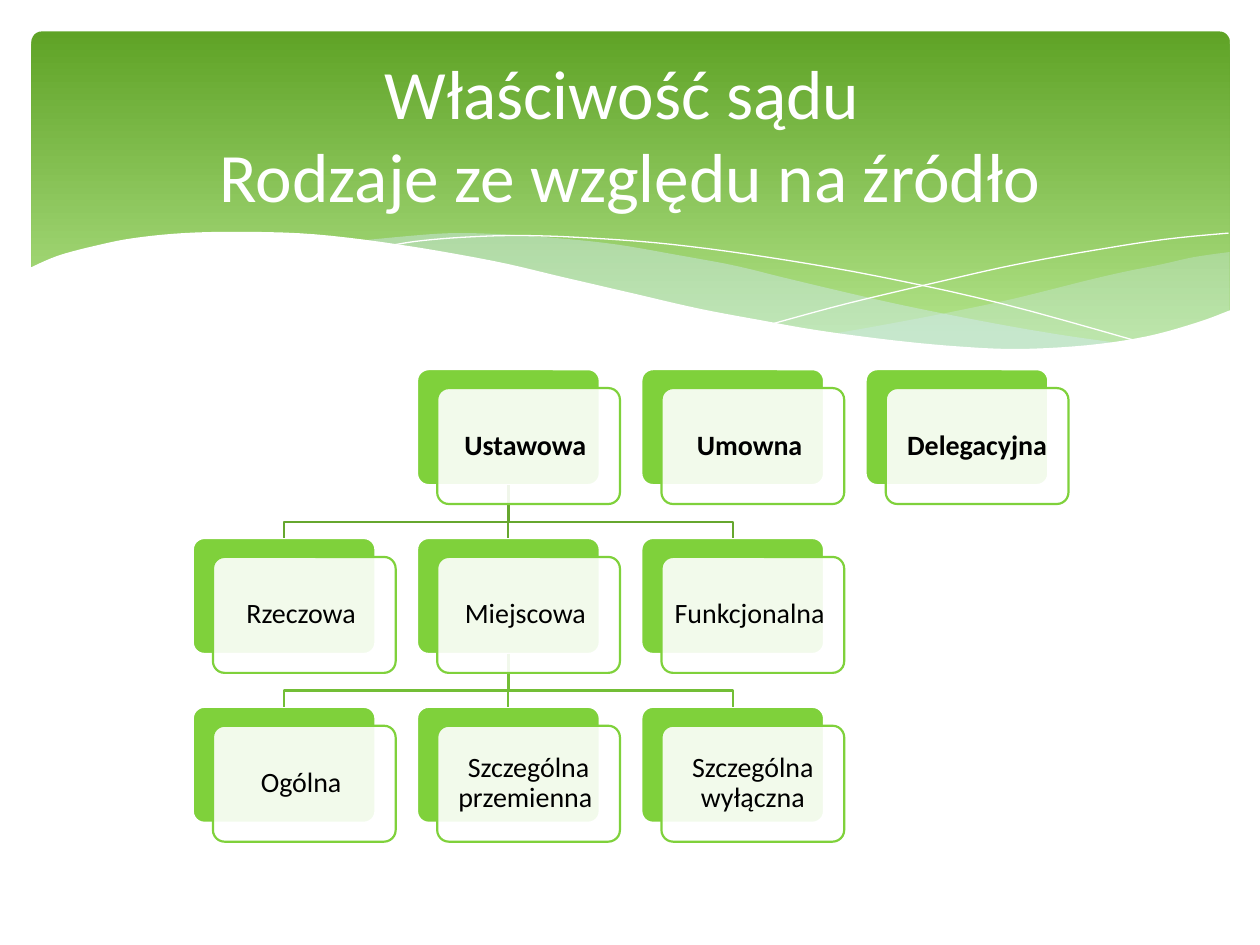
import pptx
import pptx.dml.color
import pptx.enum.shapes
import pptx.enum.text
import pptx.oxml.ns
import pptx.util
from lxml import etree

Inches = pptx.util.Inches
Pt = pptx.util.Pt
qn = pptx.oxml.ns.qn

COLORS = {
    "banner_top": "5FA326", "banner_bottom": "B2E389", "ribbon": "D6ECFF",
    "white": "FFFFFF", "black": "000000", "card": "7FD13B",
    "upper_link": "66A72F", "lower_link": "73BE36",
}

# Card grid, in inches
LEFT, TOP = 1.53, 2.93
CARD_W, CARD_H = 1.45, 0.92
GAP_X, GAP_Y = 0.33, 0.42
SHIFT_X, SHIFT_Y = 0.16, 0.15
BEND = 0.29  # drop from a parent card to the crossbar

# (column, row): label
CARDS = {
    (1, 0): "Ustawowa ", (2, 0): "Umowna ", (3, 0): "Delegacyjna",
    (0, 1): "Rzeczowa ", (1, 1): "Miejscowa ", (2, 1): "Funkcjonalna ",
    (0, 2): "Ogólna ", (1, 2): "Szczególna przemienna ", (2, 2): "Szczególna wyłączna",
}
PARENT_COLUMN = 1
LINK_COLORS = {0: "upper_link", 1: "lower_link"}  # by parent row

# Key points of the waves, left to right
RIGHT_RIBBON_TOP = [(6.61, 2.65), (7.06, 2.57), (7.53, 2.48), (8.05, 2.37), (8.61, 2.23),
                    (8.91, 2.16), (9.21, 2.1), (9.48, 2.04), (9.76, 2)]
RIGHT_RIBBON_BOTTOM = [(6.61, 2.65), (6.91, 2.69), (7.32, 2.74), (7.69, 2.77), (8.03, 2.78),
                       (8.44, 2.77), (8.81, 2.73), (9.13, 2.67), (9.42, 2.59), (9.76, 2.47)]
LONG_RIBBON_TOP = [(2.86, 1.91), (3.28, 1.87), (3.61, 1.85), (3.99, 1.86), (4.42, 1.89),
                   (4.89, 1.94), (5.41, 2.03), (5.84, 2.11), (6.29, 2.22), (7.06, 2.4),
                   (7.75, 2.54), (8.37, 2.65), (8.93, 2.73)]
LONG_RIBBON_BOTTOM = [(2.86, 1.91), (3.42, 1.99), (4.04, 2.11), (4.49, 2.22), (5.3, 2.4),
                      (6.01, 2.55), (6.65, 2.66), (7.22, 2.74), (7.73, 2.77), (8.18, 2.78),
                      (8.57, 2.77), (8.93, 2.73)]
FALLING_CURVE = [(3.09, 1.95), (3.35, 1.91), (3.74, 1.88), (4.16, 1.87), (4.69, 1.89),
                 (5.33, 1.94), (6.08, 2.04), (6.95, 2.19), (7.95, 2.41), (9.07, 2.72)]
RISING_CURVE = [(6.13, 2.57), (6.72, 2.41), (7.48, 2.23), (8.06, 2.1), (8.66, 1.99),
                (9.24, 1.9), (9.75, 1.85)]
BANNER_EDGE = [(0.23, 2.13), (0.46, 2.03), (0.76, 1.95), (1.06, 1.89), (1.46, 1.85),
               (1.93, 1.84), (2.5, 1.86), (3.16, 1.94), (3.91, 2.07), (4.47, 2.2),
               (5.03, 2.33), (5.55, 2.45), (6.03, 2.54), (6.48, 2.62), (7.08, 2.7),
               (7.61, 2.75), (8.09, 2.77), (8.63, 2.74), (9.1, 2.67), (9.5, 2.56),
               (9.77, 2.46)]


def smooth(points, steps=5):
    """Points of a Catmull-Rom curve through the given points."""
    padded = [points[0], *points, points[-1]]
    curve = []
    for a, b, c, d in zip(padded, padded[1:], padded[2:], padded[3:]):
        for t in (step / steps for step in range(steps)):
            curve.append(tuple(
                q + t / 2 * (r - p + t * (2*p - 5*q + 4*r - s + t * (3*q - p - 3*r + s)))
                for p, q, r, s in zip(a, b, c, d)))
    return curve + [points[-1]]


def card_corner(column, row):
    return LEFT + column * (CARD_W + GAP_X), TOP + row * (CARD_H + GAP_Y)


class SlideBuilder:
    font = "Calibri"
    line_width = 1.25

    def __init__(self, slide):
        self.slide = slide
        self.shapes = slide.shapes

    def color(self, name):
        return pptx.dml.color.RGBColor.from_string(COLORS[name])

    def paint(self, shape, fill=None, line=None, width=line_width, opacity=100):
        shape.shadow.inherit = False
        if fill:
            shape.fill.solid()
            shape.fill.fore_color.rgb = self.color(fill)
            if opacity < 100:
                rgb = shape.element.spPr.find(f"{qn('a:solidFill')}/{qn('a:srgbClr')}")
                etree.SubElement(rgb, qn("a:alpha"), val=str(opacity * 1000))
        else:
            shape.fill.background()
        if line:
            shape.line.color.rgb = self.color(line)
            shape.line.width = Pt(width)
        else:
            shape.line.fill.background()

    def round_box(self, x, y, width, height, radius, **style):
        box = self.shapes.add_shape(
            pptx.enum.shapes.MSO_SHAPE.ROUNDED_RECTANGLE,
            Inches(x), Inches(y), Inches(width), Inches(height))
        box.adjustments[0] = radius
        self.paint(box, **style)
        return box

    def outline(self, points, close=False, **style):
        start, *rest = [(Inches(x), Inches(y)) for x, y in points]
        builder = self.shapes.build_freeform(*start)
        builder.add_line_segments(rest, close=close)
        self.paint(builder.convert_to_shape(), **style)

    def banner(self):
        banner = self.round_box(0.25, 0.25, 9.51, 2.7, 0.03)
        banner.fill.gradient()
        banner.fill.gradient_angle = 270
        stops = zip(banner.fill.gradient_stops, (0, 0.9), ("banner_top", "banner_bottom"))
        for stop, position, name in stops:
            stop.position = position
            stop.color.rgb = self.color(name)

    def ribbon(self, top, bottom, opacity):
        edge = smooth(top) + smooth(bottom)[::-1]
        self.outline(edge, close=True, fill="ribbon", opacity=opacity)

    def straight_link(self, parent, child, color):
        link = self.shapes.add_connector(pptx.enum.shapes.MSO_CONNECTOR.STRAIGHT, 0, 0, 0, 0)
        link.begin_connect(parent, 2)
        link.end_connect(child, 0)
        link.line.color.rgb = self.color(color)
        link.line.width = Pt(self.line_width)
        etree.SubElement(link.element.spPr, qn("a:effectLst"))

    def bent_link(self, parent, child, color):
        (x1, y1), (x2, y2) = card_corner(*parent), card_corner(*child)
        x1, x2, y1 = x1 + CARD_W / 2, x2 + CARD_W / 2, y1 + CARD_H
        self.outline([(x1, y1), (x1, y1 + BEND), (x2, y1 + BEND), (x2, y2)], line=color)

    def label_card(self, column, row, label):
        x, y = card_corner(column, row)
        card = self.round_box(x + SHIFT_X, y + SHIFT_Y, CARD_W, CARD_H, 0.1,
                              fill="white", line="card", opacity=90)
        frame = card.text_frame
        frame.word_wrap = True
        frame.vertical_anchor = pptx.enum.text.MSO_ANCHOR.MIDDLE
        frame.margin_left = frame.margin_right = Inches(0.04)
        frame.margin_top = frame.margin_bottom = Inches(0.04)
        paragraph = frame.paragraphs[0]
        paragraph.add_run().text = label
        paragraph.line_spacing = 0.9
        self.format(paragraph, 16, "black", bold=row == 0)

    def format(self, paragraph, size, color, bold=False):
        paragraph.alignment = pptx.enum.text.PP_ALIGN.CENTER
        paragraph.font.name = self.font
        paragraph.font.size = Pt(size)
        paragraph.font.bold = bold
        paragraph.font.color.rgb = self.color(color)

    def title(self, first_line, second_line):
        title = self.shapes.title
        title.left, title.top = Inches(0.5), Inches(0.37)
        title.width, title.height = Inches(9), Inches(1.37)
        frame = title.text_frame
        frame.auto_size = pptx.enum.text.MSO_AUTO_SIZE.NONE
        frame.vertical_anchor = pptx.enum.text.MSO_ANCHOR.MIDDLE
        paragraph = frame.paragraphs[0]
        paragraph.add_run().text = first_line
        paragraph.add_line_break()
        paragraph.add_run().text = second_line
        self.format(paragraph, 39.6, "white")
        title.element.getparent().append(title.element)  # in front of the banner


def main():
    deck = pptx.Presentation()
    deck.slide_width, deck.slide_height = Inches(10), Inches(7.5)
    builder = SlideBuilder(deck.slides.add_slide(deck.slide_layouts[5]))

    # Banner with waves
    builder.banner()
    builder.ribbon(RIGHT_RIBBON_TOP, RIGHT_RIBBON_BOTTOM, opacity=29)
    builder.ribbon(LONG_RIBBON_TOP, LONG_RIBBON_BOTTOM, opacity=40)
    for curve in (FALLING_CURVE, RISING_CURVE):
        builder.outline(smooth(curve), line="white", width=0)
    builder.outline(smooth(BANNER_EDGE) + [(9.77, 3.29), (0.23, 3.29)],
                    close=True, fill="white")

    # Green backs of the cards
    backs = {place: builder.round_box(*card_corner(*place), CARD_W, CARD_H, 0.1,
                                      fill="card", line="white")
             for place in CARDS}

    # Links from each parent to the row below
    for row, color in LINK_COLORS.items():
        parent = (PARENT_COLUMN, row)
        for child in [place for place in CARDS if place[1] == row + 1]:
            if child[0] == PARENT_COLUMN:
                builder.straight_link(backs[parent], backs[child], color)
            else:
                builder.bent_link(parent, child, color)

    # Labelled fronts of the cards
    for place, label in CARDS.items():
        builder.label_card(*place, label)

    builder.title("Właściwość sądu ", "Rodzaje ze względu na źródło")
    deck.save("out.pptx")


if __name__ == "__main__":
    main()
